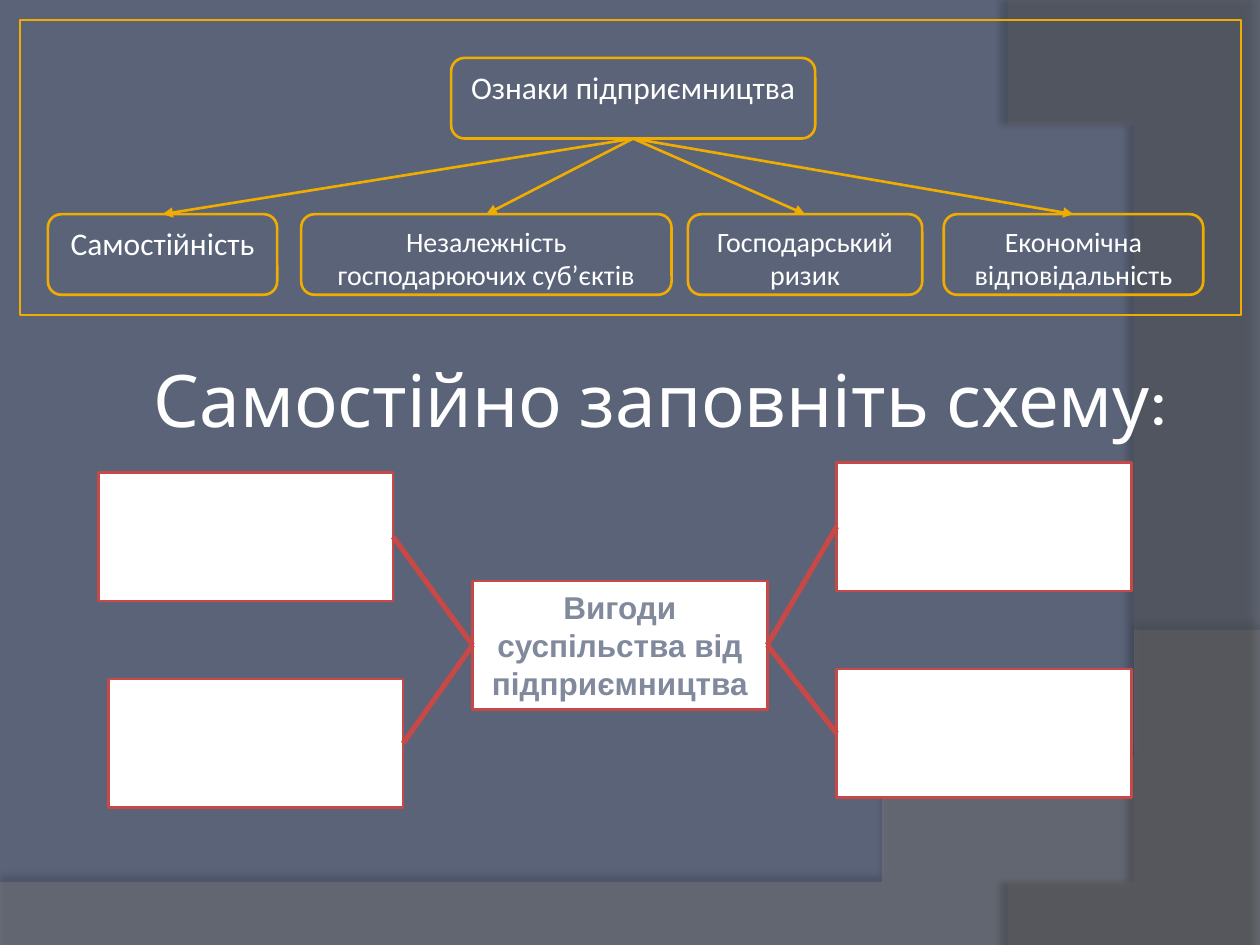
"""Build a slide with two schemes about entrepreneurship."""
from lxml.etree import SubElement
from pptx import Presentation
from pptx.dml.color import RGBColor
from pptx.enum.shapes import MSO_CONNECTOR as CONN, MSO_SHAPE as SHAPE
from pptx.enum.text import MSO_ANCHOR as ANCHOR, PP_ALIGN as ALIGN
from pptx.oxml.ns import qn
from pptx.util import Inches, Pt

WHITE = RGBColor(0xFF, 0xFF, 0xFF)
SLATE = RGBColor(0x5A, 0x63, 0x78)
GOLD = RGBColor(0xF0, 0xAD, 0x00)
RED = RGBColor(0xC6, 0x48, 0x47)
MUTED = RGBColor(0x81, 0x89, 0x9C)
GREY = RGBColor(0x7F, 0x7F, 0x7F)
DARK_GREY = RGBColor(0x5E, 0x5E, 0x5E)

W, H = 10, 7.5
TOP, BOTTOM, LEFT, RIGHT = range(4)
SIGN_Y, SIGN_H = 1.7, 0.64
SIGNS = [
    ("Самостійність", 0.38, 1.82, 18),
    ("Незалежність господарюючих суб’єктів", 2.39, 2.94, 16),
    ("Господарський ризик", 5.46, 1.86, 16),
    ("Економічна відповідальність", 7.49, 2.06, 16),
]
CARD_W, CARD_H = 2.34, 1.02
CARDS = [(0.78, 3.75, LEFT), (0.86, 5.39, LEFT), (6.64, 3.67, RIGHT), (6.64, 5.31, RIGHT)]


def bezier(start, c1, c2, end, steps=48):
    """Return points along a cubic curve."""
    points = []
    for i in range(steps + 1):
        t = i / steps
        u = 1 - t
        weights = (u ** 3, 3 * u * u * t, 3 * u * t * t, t ** 3)
        points.append(tuple(sum(k * p[axis] for k, p in zip(weights, (start, c1, c2, end)))
                            for axis in (0, 1)))
    return points


def add_swoosh(s, points, color, opacity, shade, distance, direction):
    """Add a translucent background shape with a soft shadow."""
    builder = s.shapes.build_freeform(*points[0], scale=float(Inches(1)))
    builder.add_line_segments(points[1:], close=True)
    sp = builder.convert_to_shape()
    sp.fill.solid()
    sp.fill.fore_color.rgb = color
    sp.line.fill.background()
    clr = sp.fill._xPr.find(qn("a:solidFill"))[0]
    SubElement(clr, qn("a:alpha"), val=str(opacity * 1000))
    effects = SubElement(sp._element.spPr, qn("a:effectLst"))
    shadow = SubElement(effects, qn("a:outerShdw"), blurRad=str(Pt(4)),
                        dist=str(Pt(distance)), dir=str(direction * 60000))
    black = SubElement(shadow, qn("a:srgbClr"), val="000000")
    SubElement(black, qn("a:alpha"), val=str(shade * 1000))


def set_text(sp, text, size, font, color, align=ALIGN.CENTER, anchor=ANCHOR.TOP, bold=False):
    """Write one paragraph into a shape."""
    tf = sp.text_frame
    tf.word_wrap = True
    tf.vertical_anchor = anchor
    p = tf.paragraphs[0]
    p.text = text
    p.alignment = align
    p.font.size, p.font.name, p.font.bold = Pt(size), font, bold
    p.font.color.rgb = color


def add_box(s, kind, x, y, w, h, line, fill=None):
    """Add an outlined box, filled or empty."""
    sp = s.shapes.add_shape(kind, *map(Inches, (x, y, w, h)))
    sp.shadow.inherit = False
    if fill is None:
        sp.fill.background()
    else:
        sp.fill.solid()
        sp.fill.fore_color.rgb = fill
    sp.line.color.rgb = line
    sp.line.width = Pt(1.5)
    return sp


def add_link(s, start, start_side, end, end_side, color, width, arrow=False):
    """Join the sides of two boxes with a straight line."""
    link = s.shapes.add_connector(CONN.STRAIGHT, 0, 0, 0, 0)
    link.begin_connect(start, start_side)
    link.end_connect(end, end_side)
    link.line.color.rgb = color
    link.line.width = Pt(width)
    if arrow:
        SubElement(link.line._get_or_add_ln(), qn("a:tailEnd"), type="triangle")
    SubElement(link._element.spPr, qn("a:effectLst"))


def add_background(s):
    """Paint the slide and its two curved shapes."""
    fill = s.background.fill
    fill.solid()
    fill.fore_color.rgb = SLATE
    wave = bezier((W, 5.2), (5.59, 7.29), (3.91, 7.19), (0, 7.05))
    add_swoosh(s, wave + [(0, H), (W, H)], GREY, 45, 35, 3.5, 270)
    arc = bezier((8.21, H), (9.35, 6.19), (10.18, 3), (8, 0))
    add_swoosh(s, arc + [(W, 0), (W, H)], DARK_GREY, 40, 45, 4, 180)


def add_signs(s):
    """Add the framed tree of the signs of entrepreneurship."""
    add_box(s, SHAPE.RECTANGLE, 0.16, 0.16, 9.69, 2.34, GOLD)
    root = add_box(s, SHAPE.ROUNDED_RECTANGLE, 3.58, 0.46, 2.89, SIGN_H, GOLD)
    set_text(root, "Ознаки підприємництва", 18, "Calibri", WHITE)
    boxes = []
    for text, x, w, size in SIGNS:
        sp = add_box(s, SHAPE.ROUNDED_RECTANGLE, x, SIGN_Y, w, SIGN_H, GOLD)
        set_text(sp, text, size, "Calibri", WHITE)
        boxes.append(sp)
    for sp in boxes:
        add_link(s, root, 2, sp, 0, GOLD, 1.5, arrow=True)


def add_title(s):
    """Add the heading of the exercise."""
    sp = s.shapes.add_textbox(*map(Inches, (1.17, 2.73, 8.17, 0.86)))
    set_text(sp, "Самостійно заповніть схему:", 41.4, "Karla", WHITE, ALIGN.LEFT, ANCHOR.MIDDLE)
    tf = sp.text_frame
    tf.word_wrap = False
    tf.margin_left = tf.margin_right = Inches(0.05)


def add_benefits(s):
    """Add the central card and the empty cards joined to it."""
    hub = add_box(s, SHAPE.RECTANGLE, 3.75, 4.61, CARD_W, CARD_H, RED, WHITE)
    set_text(hub, "Вигоди суспільства від підприємництва", 18, "Arial", MUTED,
             anchor=ANCHOR.MIDDLE, bold=True)
    cards = [(add_box(s, SHAPE.RECTANGLE, x, y, CARD_W, CARD_H, RED, WHITE), side)
             for x, y, side in CARDS]
    for card, side in cards:
        hub_side, card_side = (1, 3) if side == LEFT else (3, 1)
        add_link(s, hub, hub_side, card, card_side, RED, 3)


def main():
    """Build and save the slide."""
    prs = Presentation()
    prs.slide_width, prs.slide_height = Inches(W), Inches(H)
    s = prs.slides.add_slide(prs.slide_layouts[6])
    add_background(s)
    add_signs(s)
    add_title(s)
    add_benefits(s)
    prs.save("out.pptx")


if __name__ == "__main__":
    main()
